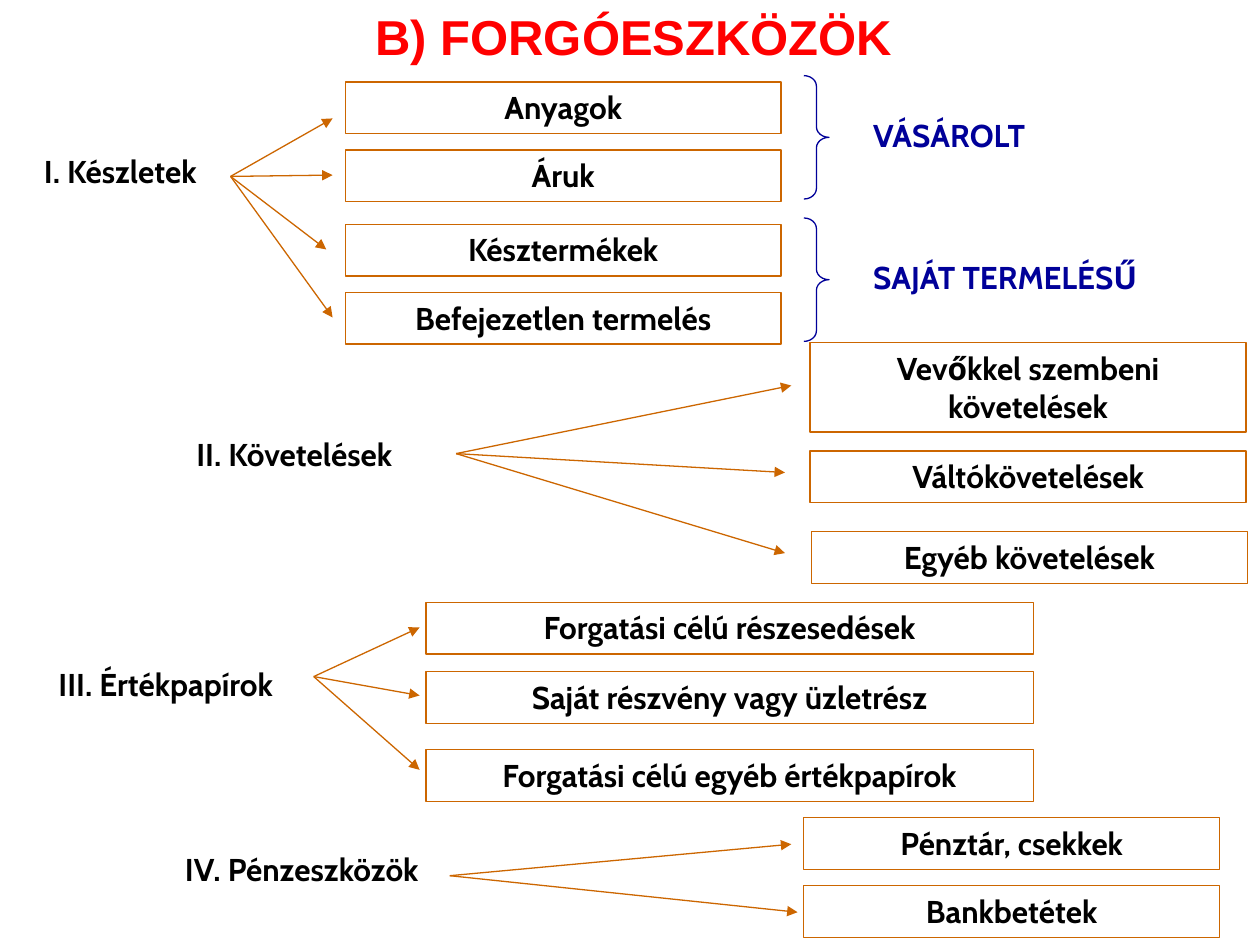
from dataclasses import dataclass

from lxml.etree import SubElement
from pptx import Presentation
from pptx.dml.color import RGBColor
from pptx.enum.shapes import MSO_CONNECTOR, MSO_SHAPE
from pptx.enum.text import MSO_ANCHOR, MSO_AUTO_SIZE, PP_ALIGN
from pptx.oxml.ns import qn
from pptx.util import Inches, Pt


@dataclass(frozen=True)
class Theme:
    title_color: RGBColor = RGBColor(0xFF, 0x00, 0x00)
    text_color: RGBColor = RGBColor(0x00, 0x00, 0x00)
    line_color: RGBColor = RGBColor(0xCC, 0x66, 0x00)
    source_color: RGBColor = RGBColor(0x00, 0x00, 0x99)
    title_font: str = "Arial"
    body_font: str = "Cabin"
    title_size: Pt = Pt(28)
    body_size: Pt = Pt(18)
    line_width: Pt = Pt(0.75)


class SlideBuilder:
    def __init__(self, slide, theme):
        self.slide = slide
        self.theme = theme

    def styled_run(self, frame, text, font, size, color, align):
        paragraph = frame.paragraphs[0]
        paragraph.alignment = align
        run = paragraph.add_run()
        run.text = text
        run.font.name = font
        run.font.size = size
        run.font.bold = True
        run.font.color.rgb = color

    def body_text(self, frame, text, color, align):
        frame.word_wrap = True
        frame.auto_size = MSO_AUTO_SIZE.SHAPE_TO_FIT_TEXT
        frame.vertical_anchor = MSO_ANCHOR.TOP
        self.styled_run(frame, text, self.theme.body_font, self.theme.body_size,
                        color, align)

    def title(self, text, left, top, width, height):
        heading = self.slide.shapes.title
        heading.left, heading.top = Inches(left), Inches(top)
        heading.width, heading.height = Inches(width), Inches(height)
        heading.text_frame.vertical_anchor = MSO_ANCHOR.MIDDLE
        self.styled_run(heading.text_frame, text, self.theme.title_font,
                        self.theme.title_size, self.theme.title_color, PP_ALIGN.CENTER)

    def outline(self, preset, left, top, width, height, color):
        shape = self.slide.shapes.add_shape(
            preset, Inches(left), Inches(top), Inches(width), Inches(height))
        shape.shadow.inherit = False
        shape.fill.background()
        shape.line.color.rgb = color
        shape.line.width = self.theme.line_width
        return shape

    def item(self, text, left, top, width, height):
        box = self.outline(MSO_SHAPE.RECTANGLE, left, top, width, height,
                           self.theme.line_color)
        self.body_text(box.text_frame, text, self.theme.text_color, PP_ALIGN.CENTER)

    def category(self, text, left, top):
        label = self.slide.shapes.add_textbox(
            Inches(left), Inches(top), Inches(4.25), Inches(0.4))
        self.body_text(label.text_frame, text, self.theme.text_color, PP_ALIGN.CENTER)

    def source(self, text, top, width):
        brace = self.outline(MSO_SHAPE.RIGHT_BRACE, 6.38, top, 0.2, 0.98,
                             self.theme.source_color)
        brace.adjustments[0] = 0.418
        label = self.slide.shapes.add_textbox(
            Inches(6.33), Inches(top + 0.27), Inches(width), Inches(0.37))
        label.text_frame.margin_left = Inches(0.6)
        self.body_text(label.text_frame, text, self.theme.source_color, PP_ALIGN.LEFT)

    def arrow(self, start, end):
        connector = self.slide.shapes.add_connector(
            MSO_CONNECTOR.STRAIGHT, *(Inches(length) for length in (*start, *end)))
        connector.line.color.rgb = self.theme.line_color
        connector.line.width = self.theme.line_width
        properties = connector.element.spPr
        SubElement(properties.find(qn("a:ln")), qn("a:tailEnd"), type="triangle")
        SubElement(properties, qn("a:effectLst"))


ITEM_HEIGHT = 0.41
TALL_HEIGHT = 0.71

GROUPS = [
    ("I. Készletek", (-1.17, 1.16), (1.83, 1.4), 3.46, [
        ("Anyagok", 2.74, 0.65, ITEM_HEIGHT, (2.64, 0.94)),
        ("Áruk", 2.74, 1.19, ITEM_HEIGHT, (2.64, 1.39)),
        ("Késztermékek", 2.74, 1.78, ITEM_HEIGHT, (2.59, 1.98)),
        ("Befejezetlen termelés", 2.74, 2.32, ITEM_HEIGHT, (2.64, 2.52)),
    ]),
    ("II. Követelések", (0.21, 3.4), (3.62, 3.6), 3.46, [
        ("Vevőkkel szembeni követelések", 6.43, 2.72, TALL_HEIGHT, (6.28, 3.06)),
        ("Váltókövetelések", 6.43, 3.58, ITEM_HEIGHT, (6.23, 3.75)),
        ("Egyéb követelések", 6.44, 4.22, ITEM_HEIGHT, (6.23, 4.39)),
    ]),
    ("III. Értékpapírok", (-0.81, 5.23), (2.49, 5.37), 4.82, [
        ("Forgatási célú részesedések", 3.38, 4.78, ITEM_HEIGHT, (3.33, 4.98)),
        ("Saját részvény vagy üzletrész", 3.38, 5.33, ITEM_HEIGHT, (3.33, 5.52)),
        ("Forgatási célú egyéb értékpapírok", 3.38, 5.95, ITEM_HEIGHT, (3.33, 6.11)),
    ]),
    ("IV. Pénzeszközök", (0.27, 6.7), (3.57, 6.95), 3.3, [
        ("Pénztár, csekkek", 6.38, 6.49, ITEM_HEIGHT, (6.28, 6.7)),
        ("Bankbetétek", 6.38, 7.03, ITEM_HEIGHT, (6.33, 7.24)),
    ]),
]

SOURCES = [("VÁSÁROLT", 0.6, 2.04), ("SAJÁT TERMELÉSŰ", 1.73, 3.06)]


def main():
    presentation = Presentation()
    presentation.slide_width = Inches(10)
    presentation.slide_height = Inches(7.5)
    title_only = presentation.slide_layouts[5]
    builder = SlideBuilder(presentation.slides.add_slide(title_only), Theme())

    builder.title("B) FORGÓESZKÖZÖK", 0.78, -0.34, 8.5, 1.25)
    for category, position, origin, width, items in GROUPS:
        builder.category(category, *position)
        for name, left, top, height, arrow_end in items:
            builder.item(name, left, top, width, height)
            builder.arrow(origin, arrow_end)
    for name, top, width in SOURCES:
        builder.source(name, top, width)

    presentation.save("out.pptx")


if __name__ == "__main__":
    main()
